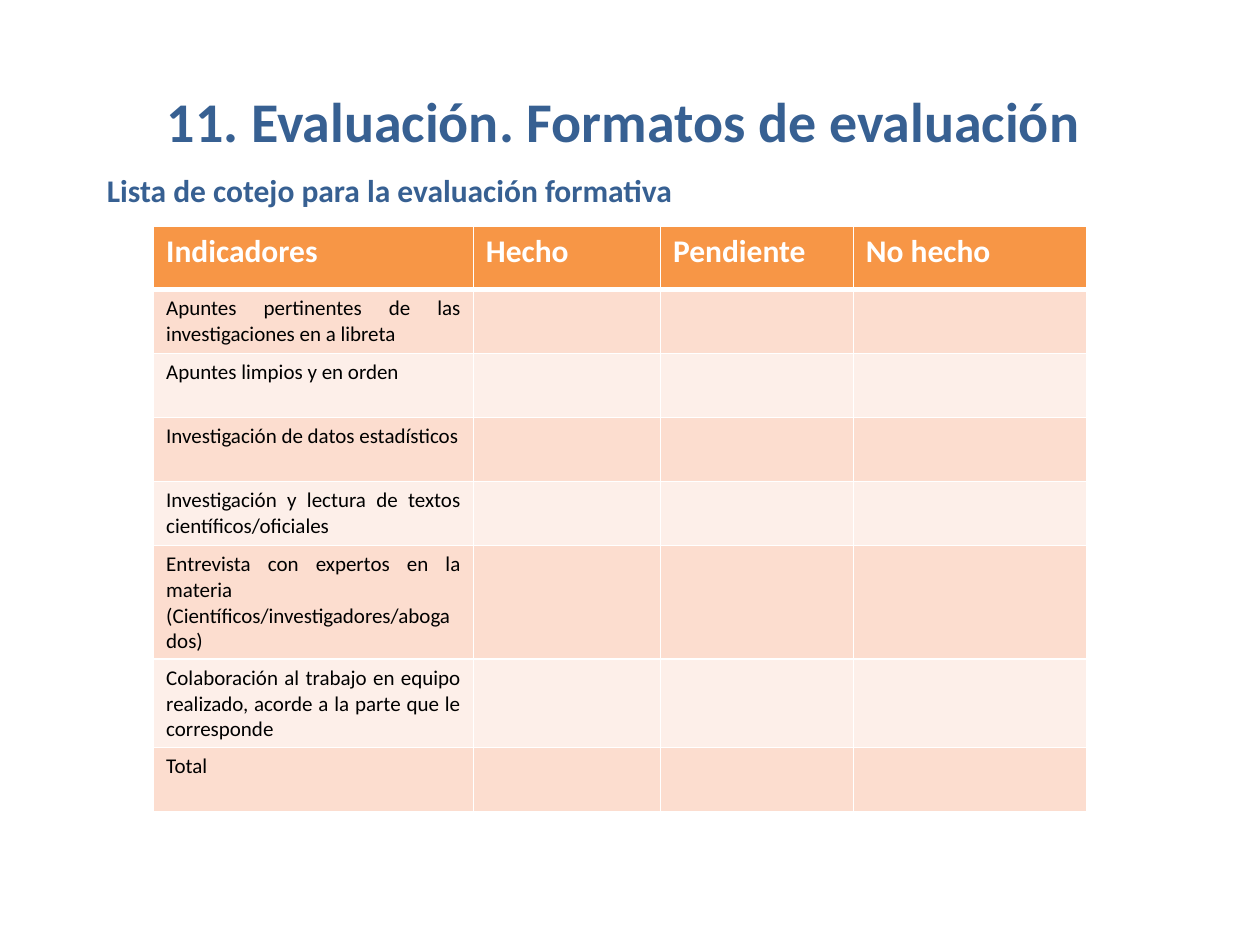
from dataclasses import dataclass

from lxml.etree import SubElement
from pptx import Presentation
from pptx.dml.color import RGBColor
from pptx.enum.text import MSO_ANCHOR, MSO_AUTO_SIZE, PP_ALIGN
from pptx.oxml.ns import qn
from pptx.util import Pt


@dataclass(frozen=True)
class Theme:
    font: str = "Calibri"
    heading: str = "376092"
    header_fill: str = "F79646"
    band_fills: tuple = ("FCDDCF", "FDEFE9")
    light: str = "FFFFFF"
    dark: str = "000000"
    title_size: int = 32
    subtitle_size: int = 18
    header_size: int = 18
    body_size: int = 12
    thin_border: int = 1
    thick_border: int = 3


@dataclass(frozen=True)
class Box:
    left: float
    top: float
    width: float
    height: float

    def lengths(self):
        return Pt(self.left), Pt(self.top), Pt(self.width), Pt(self.height)


THEME = Theme()
HEADERS = ["Indicadores", "Hecho", "Pendiente", "No hecho"]
COLUMN_WIDTHS = [182.7, 107, 110.2, 133.3]
ROW_HEIGHT = 36.57
INDICATORS = [
    ("Apuntes pertinentes de las investigaciones en a libreta", ROW_HEIGHT),
    ("Apuntes limpios y en orden", ROW_HEIGHT),
    ("Investigación de datos estadísticos", ROW_HEIGHT),
    ("Investigación y lectura de textos científicos/oficiales", ROW_HEIGHT),
    ("Entrevista con expertos en la materia (Científicos/investigadores/abogados)", 64.8),
    ("Colaboración al trabajo en equipo realizado, acorde a la parte que le corresponde", 50.4),
    ("Total", ROW_HEIGHT),
]


def paint(fill, color):
    fill.solid()
    fill.fore_color.rgb = RGBColor.from_string(color)


def write(frame, text, size, color, bold, align):
    paragraph = frame.paragraphs[0]
    paragraph.alignment = align
    run = paragraph.add_run()
    run.text = text
    run.font.name = THEME.font
    run.font.size = Pt(size)
    run.font.bold = bold
    run.font.color.rgb = RGBColor.from_string(color)


def place_title(slide, box):
    title = slide.shapes.title
    title.left, title.top, title.width, title.height = box.lengths()
    outline = SubElement(title._element.spPr, qn("a:prstGeom"), prst="roundRect")
    SubElement(outline, qn("a:avLst"))
    paint(title.fill, THEME.light)
    frame = title.text_frame
    frame.word_wrap = True
    frame.auto_size = MSO_AUTO_SIZE.NONE
    frame.vertical_anchor = MSO_ANCHOR.MIDDLE
    write(frame, "11. Evaluación. Formatos de evaluación ", THEME.title_size,
          THEME.heading, True, PP_ALIGN.CENTER)


def place_subtitle(slide, box):
    frame = slide.shapes.add_textbox(*box.lengths()).text_frame
    frame.word_wrap = True
    frame.auto_size = MSO_AUTO_SIZE.SHAPE_TO_FIT_TEXT
    write(frame, "Lista de cotejo para la evaluación formativa", THEME.subtitle_size,
          THEME.heading, True, PP_ALIGN.LEFT)


def style_cell(cell, fill, top, bottom):
    properties = cell._tc.get_or_add_tcPr()
    thin = THEME.thin_border
    for side, width in (("lnL", thin), ("lnR", thin), ("lnT", top), ("lnB", bottom)):
        border = SubElement(properties, qn(f"a:{side}"), w=str(Pt(width)))
        SubElement(SubElement(border, qn("a:solidFill")), qn("a:srgbClr"), val=THEME.light)
    paint(cell.fill, fill)


def place_checklist(slide, box):
    table = slide.shapes.add_table(len(INDICATORS) + 1, len(HEADERS), *box.lengths()).table
    for column, width in zip(table.columns, COLUMN_WIDTHS):
        column.width = Pt(width)

    table.rows[0].height = Pt(ROW_HEIGHT)
    for cell, heading in zip(table.rows[0].cells, HEADERS):
        style_cell(cell, THEME.header_fill, THEME.thin_border, THEME.thick_border)
        write(cell.text_frame, heading, THEME.header_size, THEME.light, True, PP_ALIGN.LEFT)

    for index, (indicator, height) in enumerate(INDICATORS):
        row = table.rows[index + 1]
        row.height = Pt(height)
        top = THEME.thin_border if index else THEME.thick_border
        for cell in row.cells:
            style_cell(cell, THEME.band_fills[index % 2], top, THEME.thin_border)
        write(row.cells[0].text_frame, indicator, THEME.body_size, THEME.dark, False,
              PP_ALIGN.JUSTIFY)


def main():
    presentation = Presentation()
    presentation.slide_width, presentation.slide_height = Pt(720), Pt(540)
    slide = presentation.slides.add_slide(presentation.slide_layouts.get_by_name("Title Only"))
    place_title(slide, Box(65.2, 49, 589.7, 39.6))
    place_subtitle(slide, Box(54, 94.3, 601.2, 28.8))
    table_height = ROW_HEIGHT + sum(height for _, height in INDICATORS)
    place_checklist(slide, Box(87.8, 129, sum(COLUMN_WIDTHS), table_height))
    presentation.save("out.pptx")


if __name__ == "__main__":
    main()
